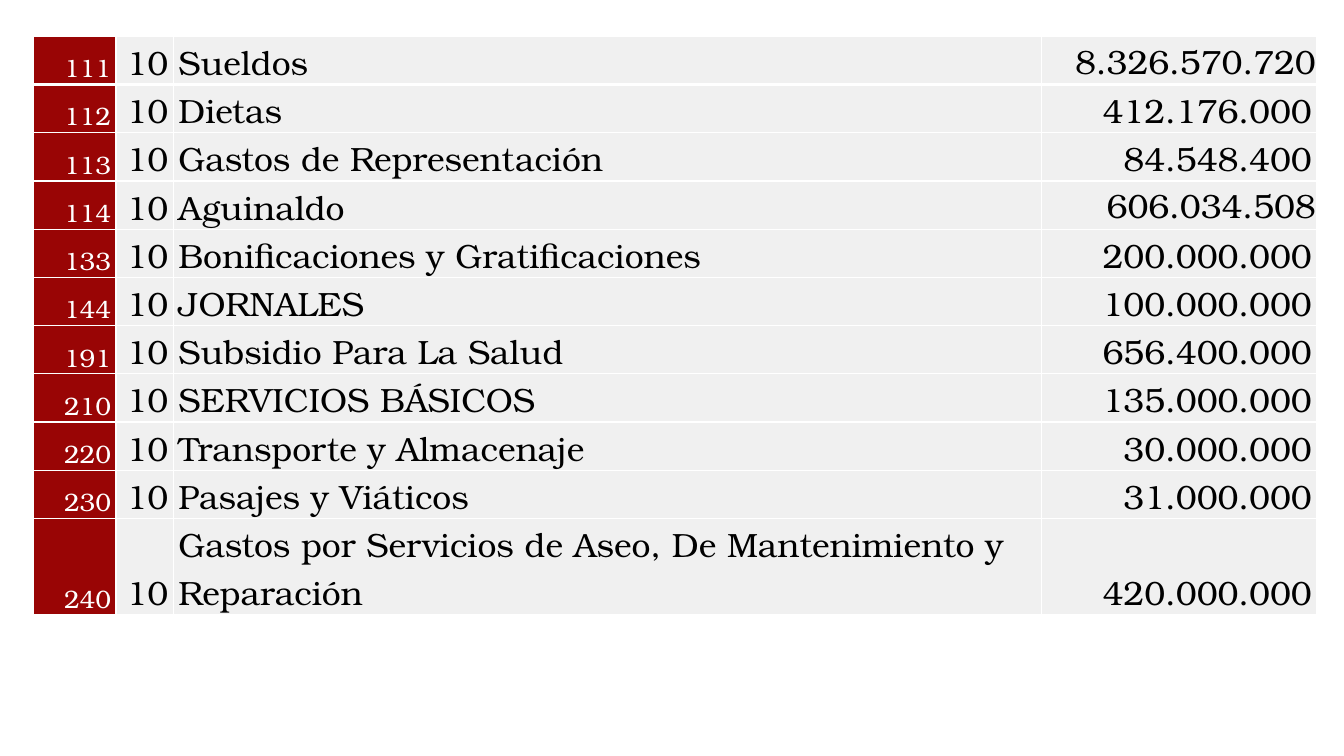
from lxml.etree import SubElement
from pptx import Presentation
from pptx.dml.color import RGBColor
from pptx.enum.text import MSO_ANCHOR, PP_ALIGN
from pptx.oxml.ns import qn
from pptx.util import Inches, Pt

BUDGET = [
    ("111", "10", "Sueldos", "8.326.570.720"),
    ("112", "10", "Dietas", "412.176.000"),
    ("113", "10", "Gastos de Representación", "84.548.400"),
    ("114", "10", "Aguinaldo", "606.034.508"),
    ("133", "10", "Bonificaciones y Gratificaciones", "200.000.000"),
    ("144", "10", "JORNALES", "100.000.000"),
    ("191", "10", "Subsidio Para La Salud", "656.400.000"),
    ("210", "10", "SERVICIOS BÁSICOS", "135.000.000"),
    ("220", "10", "Transporte y Almacenaje", "30.000.000"),
    ("230", "10", "Pasajes y Viáticos", "31.000.000"),
    ("240", "10", "Gastos por Servicios de Aseo, De Mantenimiento y Reparación", "420.000.000"),
]
CENTRED_AMOUNTS = {"111", "114"}
COLUMN_WIDTHS = [0.82, 0.57, 8.61, 2.73]
ROW_HEIGHTS = [0.44] * (len(BUDGET) - 1) + [0.8]
CODE, NAME, AMOUNT = 0, 2, 3
COLORS = {"code": "990505", "row": "F0F0F0", "white": "FFFFFF", "text": "000000"}
FONT = "TeX Gyre Bonum"


def add_borders(cell, bottom_width):
    properties = cell._tc.get_or_add_tcPr()
    for side, width in (("L", 1), ("R", 1), ("T", 1), ("B", bottom_width)):
        line = SubElement(properties, qn(f"a:ln{side}"), w=str(Pt(width)))
        fill = SubElement(line, qn("a:solidFill"))
        SubElement(fill, qn("a:srgbClr"), val=COLORS["white"])


def fill_cell(cell, text, column, first_row, centred):
    is_code = column == CODE
    add_borders(cell, 3 if first_row else 1)
    cell.fill.solid()
    cell.fill.fore_color.rgb = RGBColor.from_string(COLORS["code" if is_code else "row"])
    cell.vertical_anchor = MSO_ANCHOR.MIDDLE if centred else MSO_ANCHOR.BOTTOM
    cell.margin_left = cell.margin_right = Inches(0.01 if centred else 0.05)
    cell.margin_top = Inches(0.01 if centred else 0)
    cell.margin_bottom = 0
    cell.text_frame.text = text
    para = cell.text_frame.paragraphs[0]
    para.alignment = PP_ALIGN.LEFT if column == NAME else PP_ALIGN.RIGHT
    if not centred:
        para.line_spacing = 1.07
    font = para.runs[0].font
    font.name = FONT
    font.size = Pt(18 if is_code else 24)
    font.bold = False
    font.color.rgb = RGBColor.from_string(COLORS["white" if is_code else "text"])


def main():
    deck = Presentation()
    deck.slide_width, deck.slide_height = Inches(13.33), Inches(7.5)
    page = deck.slides.add_slide(deck.slide_layouts[6])
    table = page.shapes.add_table(
        len(BUDGET), len(COLUMN_WIDTHS), Inches(0.33), Inches(0.36),
        Inches(sum(COLUMN_WIDTHS)), Inches(sum(ROW_HEIGHTS)),
    ).table
    table.first_row = table.horz_banding = False
    for column, width in zip(table.columns, COLUMN_WIDTHS):
        column.width = Inches(width)
    for row, height in zip(table.rows, ROW_HEIGHTS):
        row.height = Inches(height)
    for row, entry in enumerate(BUDGET):
        for column, text in enumerate(entry):
            centred = column == AMOUNT and entry[CODE] in CENTRED_AMOUNTS
            fill_cell(table.cell(row, column), text, column, row == 0, centred)
    deck.save("out.pptx")


if __name__ == "__main__":
    main()
